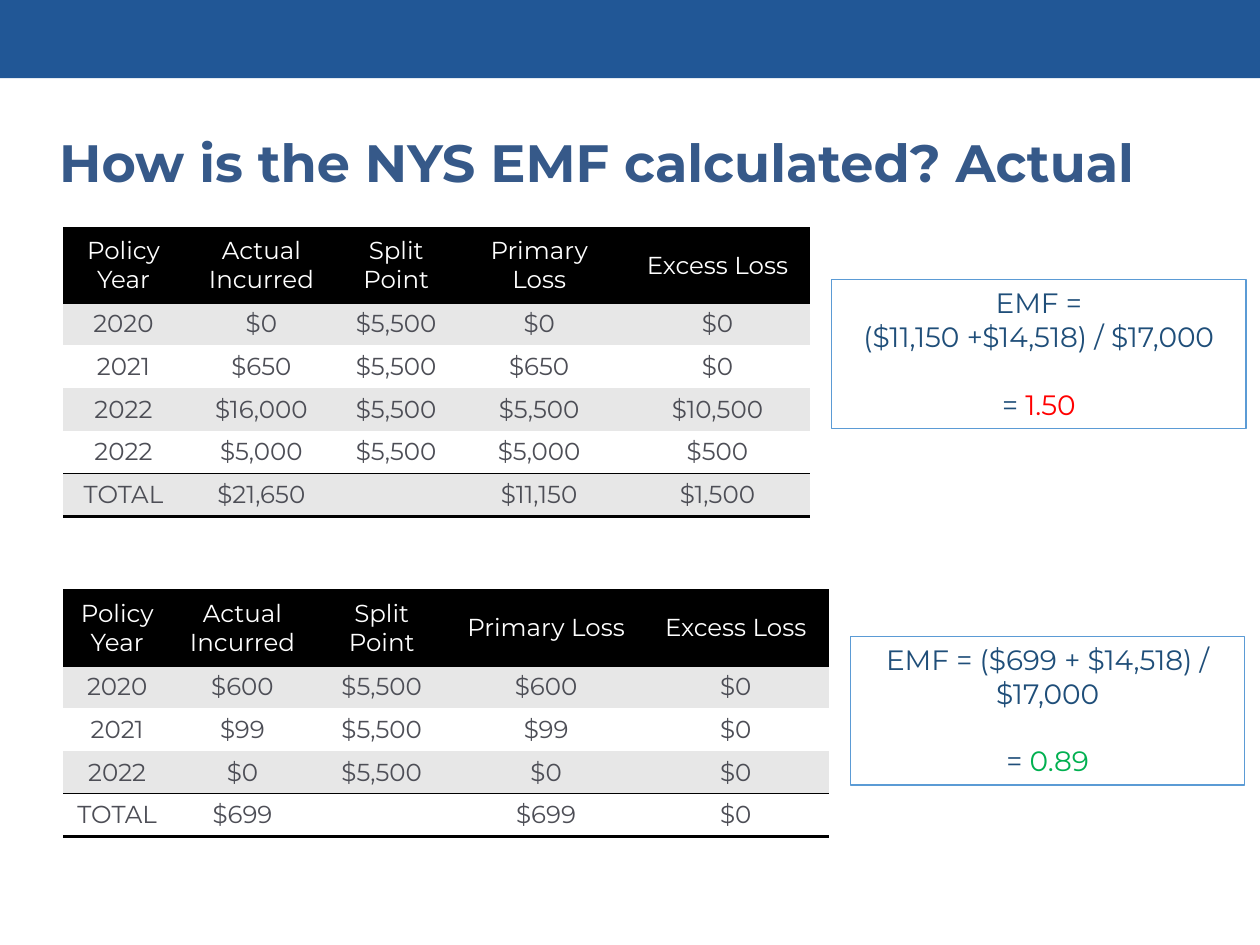
from dataclasses import dataclass

from lxml import etree
from pptx import Presentation
from pptx import util as u
from pptx.dml.color import RGBColor
from pptx.enum import shapes, text
from pptx.oxml import ns


@dataclass(frozen=True)
class Theme:
    font: str = "Montserrat"
    bar: str = "003F87"
    title: str = "365989"
    header: str = "000000"
    white: str = "FFFFFF"
    band: str = "E7E7E7"
    body: str = "4D4E56"
    formula: str = "1F4E79"
    outline: str = "5B9BD5"
    high: str = "FF0000"
    low: str = "00B050"
    title_size: int = 30
    cell_size: int = 14
    formula_size: int = 16
    blank_line: float = 19.5


@dataclass(frozen=True)
class LossTable:
    top: float
    widths: tuple[float, ...]
    rows: tuple[tuple[str, ...], ...]


@dataclass(frozen=True)
class FormulaBox:
    left: float
    top: float
    width: float
    lines: tuple[str, ...]
    result: str
    result_color: str


THEME = Theme()
HEADINGS = ("Policy Year", "Actual Incurred", "Split Point", "Primary Loss", "Excess Loss")
NO_GRID_STYLE = "{2D5ABB26-0587-4C30-8999-92F81FD0307C}"
TABLE_LEFT, HEADER_HEIGHT, ROW_HEIGHT = 0.5, 0.59, 0.34
BOX_HEIGHT = 1.18

TABLES = (
    LossTable(1.81, (0.96, 1.23, 0.91, 1.36, 1.47), (
        ("2020", "$0", "$5,500", "$0", "$0"),
        ("2021", "$650", "$5,500", "$650", "$0"),
        ("2022", "$16,000", "$5,500", "$5,500", "$10,500"),
        ("2022", "$5,000", "$5,500", "$5,000", "$500"),
        ("TOTAL", "$21,650", "", "$11,150", "$1,500"),
    )),
    LossTable(4.69, (0.86, 1.13, 1.08, 1.53, 1.48), (
        ("2020", "$600", "$5,500", "$600", "$0"),
        ("2021", "$99", "$5,500", "$99", "$0"),
        ("2022", "$0", "$5,500", "$0", "$0"),
        ("TOTAL", "$699", "", "$699", "$0"),
    )),
)
BOXES = (
    FormulaBox(6.6, 2.22, 3.29, ("EMF =", "($11,150 +$14,518) / $17,000"), "1.50", THEME.high),
    FormulaBox(6.75, 5.05, 3.13, ("EMF = ($699 + $14,518) / $17,000",), "0.89", THEME.low),
)


def rgb(color: str) -> RGBColor:
    return RGBColor.from_string(color)


def add_run(p, words: str, size: int, color: str, bold: bool = False) -> None:
    r = p.add_run()
    r.text = words
    r.font.name = THEME.font
    r.font.size = u.Pt(size)
    r.font.bold = bold
    r.font.color.rgb = rgb(color)


def add_border(cell, side: str, points: float) -> None:
    tc_pr = cell._tc.get_or_add_tcPr()
    ln = etree.SubElement(tc_pr, ns.qn(f"a:ln{side}"), w=str(u.Pt(points)))
    fill = etree.SubElement(ln, ns.qn("a:solidFill"))
    etree.SubElement(fill, ns.qn("a:srgbClr"), val=THEME.header)


def add_rect(s, left: float, top: float, width: float, height: float):
    sp = s.shapes.add_shape(shapes.MSO_SHAPE.RECTANGLE, u.Inches(left), u.Inches(top),
                            u.Inches(width), u.Inches(height))
    sp.shadow.inherit = False
    return sp


def add_bar(s) -> None:
    sp = add_rect(s, 0, 0, 10, 0.62)
    sp.fill.solid()
    sp.fill.fore_color.rgb = rgb(THEME.bar)
    color = sp._element.spPr.find(f".//{ns.qn('a:srgbClr')}")
    etree.SubElement(color, ns.qn("a:alpha"), val="87000")
    sp.line.fill.background()


def add_title(s, words: str) -> None:
    sp = s.shapes.title
    sp.left, sp.top, sp.width, sp.height = map(u.Inches, (0.37, 0.74, 9.21, 1.14))
    tf = sp.text_frame
    tf.vertical_anchor = text.MSO_ANCHOR.MIDDLE
    p = tf.paragraphs[0]
    p.alignment = text.PP_ALIGN.LEFT
    p.line_spacing = 0.9
    add_run(p, words, THEME.title_size, THEME.title, bold=True)


def add_loss_table(s, spec: LossTable) -> None:
    rows = (HEADINGS, *spec.rows)
    last = len(rows) - 1
    height = HEADER_HEIGHT + last * ROW_HEIGHT
    frame = s.shapes.add_table(len(rows), len(HEADINGS), u.Inches(TABLE_LEFT),
                               u.Inches(spec.top), u.Inches(sum(spec.widths)), u.Inches(height))
    tbl = frame.table
    tbl._tbl.tblPr.find(ns.qn("a:tableStyleId")).text = NO_GRID_STYLE
    for column, width in zip(tbl.columns, spec.widths):
        column.width = u.Inches(width)

    # Rule weights by row: top and bottom
    rules = {0: (2, 2), last - 1: (0, 1), last: (1, 2)}
    for i, values in enumerate(rows):
        tbl.rows[i].height = u.Inches(ROW_HEIGHT if i else HEADER_HEIGHT)
        fill = (THEME.band if i % 2 else THEME.white) if i else THEME.header
        for j, value in enumerate(values):
            cell = tbl.cell(i, j)
            for side, points in zip("TB", rules.get(i, (0, 0))):
                if points:
                    add_border(cell, side, points)
            cell.fill.solid()
            cell.fill.fore_color.rgb = rgb(fill)
            cell.vertical_anchor = text.MSO_ANCHOR.MIDDLE
            p = cell.text_frame.paragraphs[0]
            p.alignment = text.PP_ALIGN.CENTER
            p.font.size = u.Pt(THEME.cell_size)
            if value:
                add_run(p, value, THEME.cell_size, THEME.body if i else THEME.white)


def add_formula(s, box: FormulaBox) -> None:
    sp = add_rect(s, box.left, box.top, box.width, BOX_HEIGHT)
    sp.fill.background()
    sp.line.color.rgb = rgb(THEME.outline)
    sp.line.width = u.Pt(0.75)
    tf = sp.text_frame
    tf.word_wrap = True
    tf.vertical_anchor = text.MSO_ANCHOR.TOP
    for i, line in enumerate((*box.lines, "= ")):
        p = tf.add_paragraph() if i else tf.paragraphs[0]
        p.alignment = text.PP_ALIGN.CENTER
        add_run(p, line, THEME.formula_size, THEME.formula)
    # The result stands one line below the formula
    p.space_before = u.Pt(THEME.blank_line)
    add_run(p, box.result, THEME.formula_size, box.result_color)


def main() -> None:
    prs = Presentation()
    prs.slide_width, prs.slide_height = u.Inches(10), u.Inches(7.5)
    s = prs.slides.add_slide(prs.slide_layouts[5])

    # Top bar and title
    add_bar(s)
    add_title(s, "How is the NYS EMF calculated? Actual")

    # Loss tables and their results
    for spec in TABLES:
        add_loss_table(s, spec)
    for box in BOXES:
        add_formula(s, box)

    prs.save("out.pptx")


if __name__ == "__main__":
    main()
